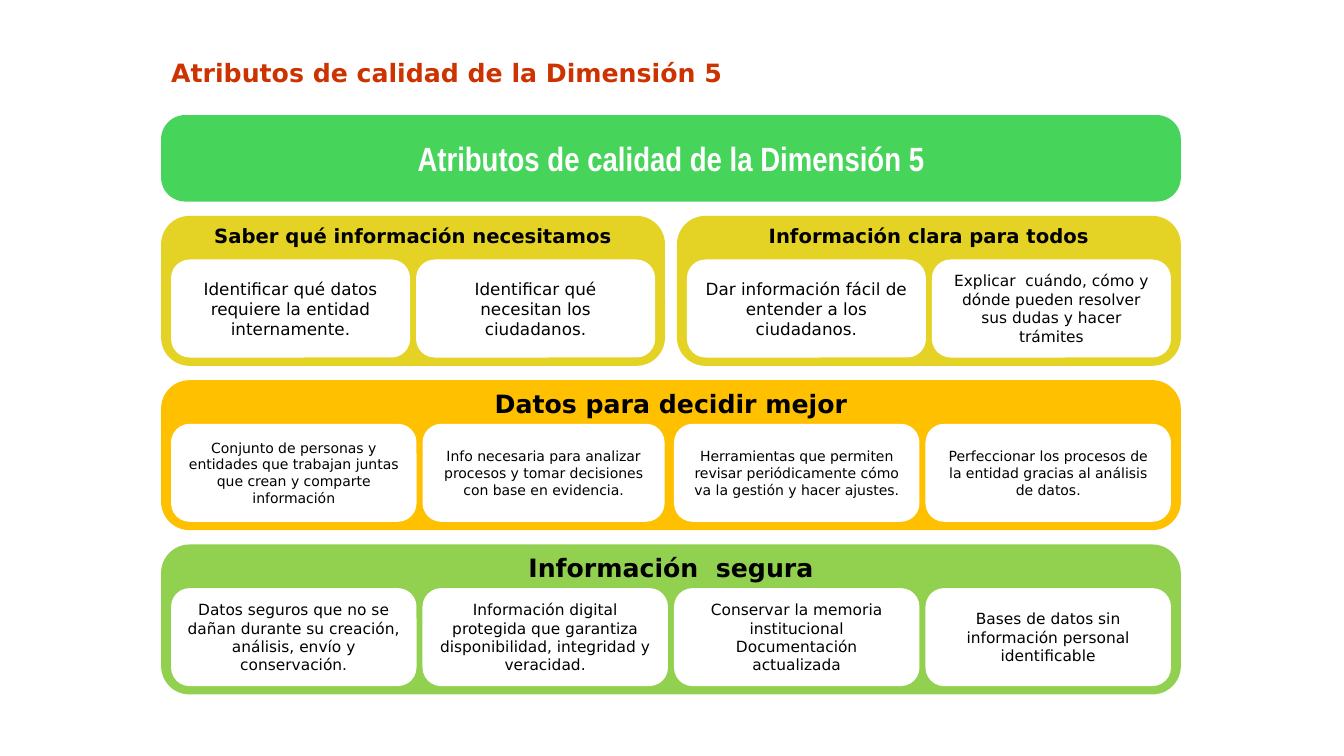
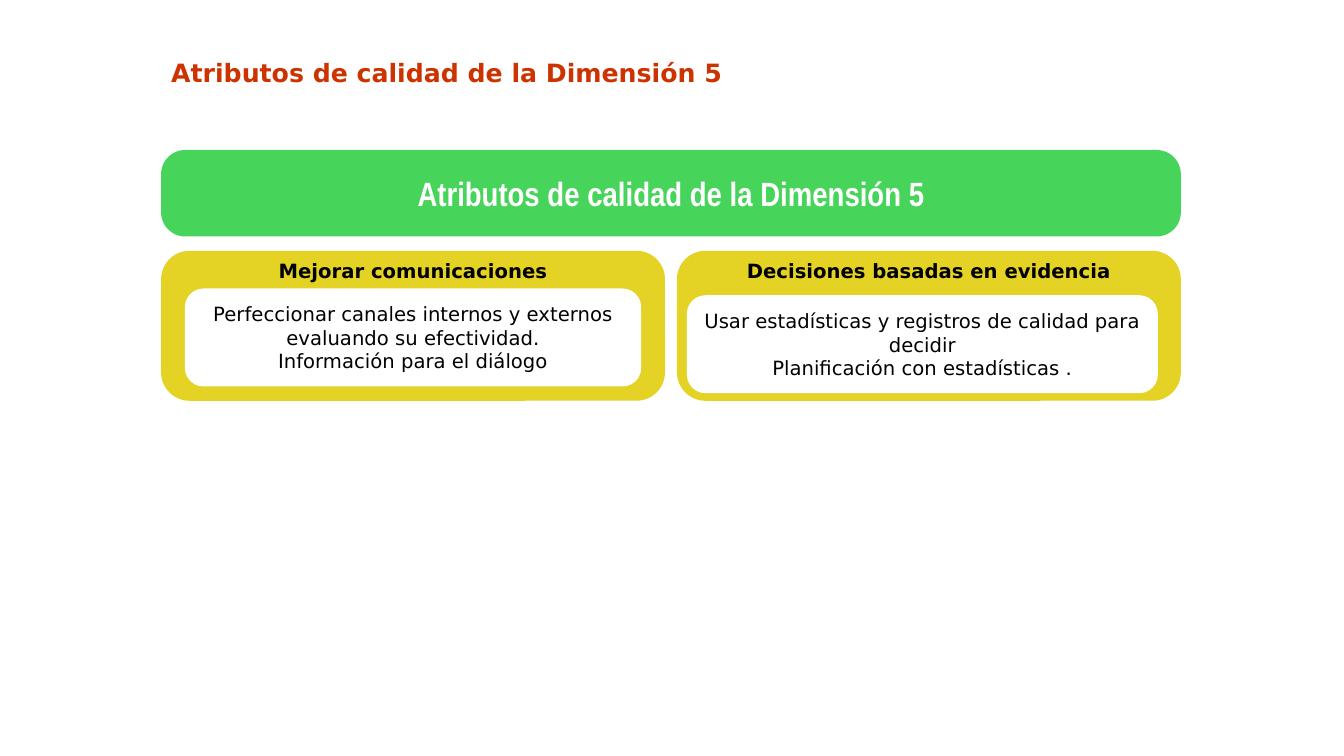
"""Build two slides of rounded panels with the quality attributes of Dimension 5."""
from pptx import Presentation
from pptx.dml.color import RGBColor
from pptx.enum.shapes import MSO_SHAPE
from pptx.enum.text import MSO_ANCHOR, MSO_AUTO_SIZE, PP_ALIGN
from pptx.util import Cm, Pt


class Theme:
    red = RGBColor.from_string("CC3300")
    green = RGBColor.from_string("47D45A")
    yellow = RGBColor.from_string("E4D224")
    amber = RGBColor.from_string("FFC000")
    lime = RGBColor.from_string("92D050")
    white = RGBColor.from_string("FFFFFF")
    black = RGBColor.from_string("000000")
    font, narrow = "DejaVu Sans", "Arial Narrow"
    banner, title, head, body, small, tiny = 24, 18, 14, 12, 11, 10


def write(frame, lines, size, color, bold=False, font=Theme.font, align=PP_ALIGN.CENTER):
    frame.word_wrap = True
    for i, line in enumerate(lines):
        para = frame.add_paragraph() if i else frame.paragraphs[0]
        para.alignment = align
        run = para.add_run()
        run.text = line
        run.font.size, run.font.bold, run.font.name = Pt(size), bold, font
        run.font.color.rgb = color


def block(slide, x, y, w, h, fill, curve, inset, anchor):
    shape = slide.shapes.add_shape(MSO_SHAPE.ROUNDED_RECTANGLE, Cm(x), Cm(y), Cm(w), Cm(h))
    shape.adjustments[0] = curve
    shape.shadow.inherit = False
    shape.fill.solid()
    shape.fill.fore_color.rgb = fill
    shape.line.fill.background()
    frame = shape.text_frame
    frame.margin_left = frame.margin_right = Cm(inset)
    frame.margin_top = frame.margin_bottom = Cm(inset)
    frame.vertical_anchor = anchor
    return frame


NAME = "Atributos de calidad de la Dimensión 5"
LEFT, WIDE, HALF = 4.06, 25.7, 12.7
BANNER, PANEL, CARD = 2.18, 3.78, 2.47
GAP, PAD, SPACE, DROP = 0.36, 0.25, 0.15, 1.1
RIGHT = WIDE - HALF

# Panels: row, offset, width, fill, heading size, heading, cards.
# Cards: size, lines, then an optional own offset, drop and width.
DECK = [
    (2.9, [
        (0, 0, HALF, Theme.yellow, Theme.head, "Saber qué información necesitamos", [
            (Theme.body, ["Identificar qué datos requiere la entidad internamente."]),
            (Theme.body, ["Identificar qué necesitan los ciudadanos."]),
        ]),
        (0, RIGHT, HALF, Theme.yellow, Theme.head, "Información clara para todos", [
            (Theme.body, ["Dar información fácil de entender a los ciudadanos."]),
            (Theme.small, ["Explicar  cuándo, cómo y dónde pueden resolver sus dudas y hacer trámites"]),
        ]),
        (1, 0, WIDE, Theme.amber, Theme.title, "Datos para decidir mejor", [
            (Theme.tiny, ["Conjunto de personas y entidades que trabajan juntas que crean y comparte información"]),
            (Theme.tiny, ["Info necesaria para analizar procesos y tomar decisiones con base en evidencia."],
             6.59, DROP, 6.1),
            (Theme.tiny, ["Herramientas que permiten revisar periódicamente cómo va la gestión y hacer ajustes."]),
            (Theme.tiny, ["Perfeccionar los procesos de la entidad gracias al análisis de datos."]),
        ]),
        (2, 0, WIDE, Theme.lime, Theme.title, "Información  segura", [
            (Theme.small, ["Datos seguros que no se dañan durante su creación, análisis, envío y conservación."]),
            (Theme.small, ["Información digital protegida que garantiza disponibilidad, integridad y veracidad."]),
            (Theme.small, ["Conservar la memoria institucional", "Documentación actualizada"]),
            (Theme.small, ["Bases de datos sin información personal identificable"]),
        ]),
    ]),
    (3.78, [
        (0, 0, HALF, Theme.yellow, Theme.head, "Mejorar comunicaciones", [
            (Theme.head, ["Perfeccionar canales internos y externos evaluando su efectividad.",
                          "Información para el diálogo"], 0.6, 0.95, 11.5),
        ]),
        (0, RIGHT, HALF, Theme.yellow, Theme.head, "Decisiones basadas en evidencia", [
            (Theme.head, ["Usar estadísticas y registros de calidad para decidir",
                          "Planificación con estadísticas ."], PAD, 1.12, 11.87),
        ]),
    ]),
]

deck = Presentation()
deck.slide_width, deck.slide_height = Cm(33.87), Cm(19.05)

for top, panels in DECK:
    slide = deck.slides.add_slide(deck.slide_layouts[5])
    title = slide.shapes.title
    title.left, title.top, title.width, title.height = Cm(LEFT), Cm(1.32), Cm(17.02), Cm(1.02)
    title.text_frame.auto_size = MSO_AUTO_SIZE.NONE
    title.text_frame.vertical_anchor = MSO_ANCHOR.TOP
    write(title.text_frame, [NAME], Theme.title, Theme.red, True, align=PP_ALIGN.LEFT)

    frame = block(slide, LEFT, top, WIDE, BANNER, Theme.green, 0.28, PAD, MSO_ANCHOR.MIDDLE)
    write(frame, [NAME], Theme.banner, Theme.white, True, Theme.narrow)

    for row, shift, width, fill, size, head, cards in panels:
        x = LEFT + shift
        y = top + BANNER + GAP + row * (PANEL + GAP)
        frame = block(slide, x, y, width, PANEL, fill, 0.19, 0, MSO_ANCHOR.TOP)
        write(frame, [head], size, Theme.black, True)

        each = (width - 2 * PAD + SPACE) / len(cards) - SPACE
        for i, (size, lines, *own) in enumerate(cards):
            dx, dy, w = own or (PAD + i * (each + SPACE), DROP, each)
            frame = block(slide, x + dx, y + dy, w, CARD, Theme.white, 0.19, PAD, MSO_ANCHOR.MIDDLE)
            write(frame, lines, size, Theme.black)

deck.save("out.pptx")
